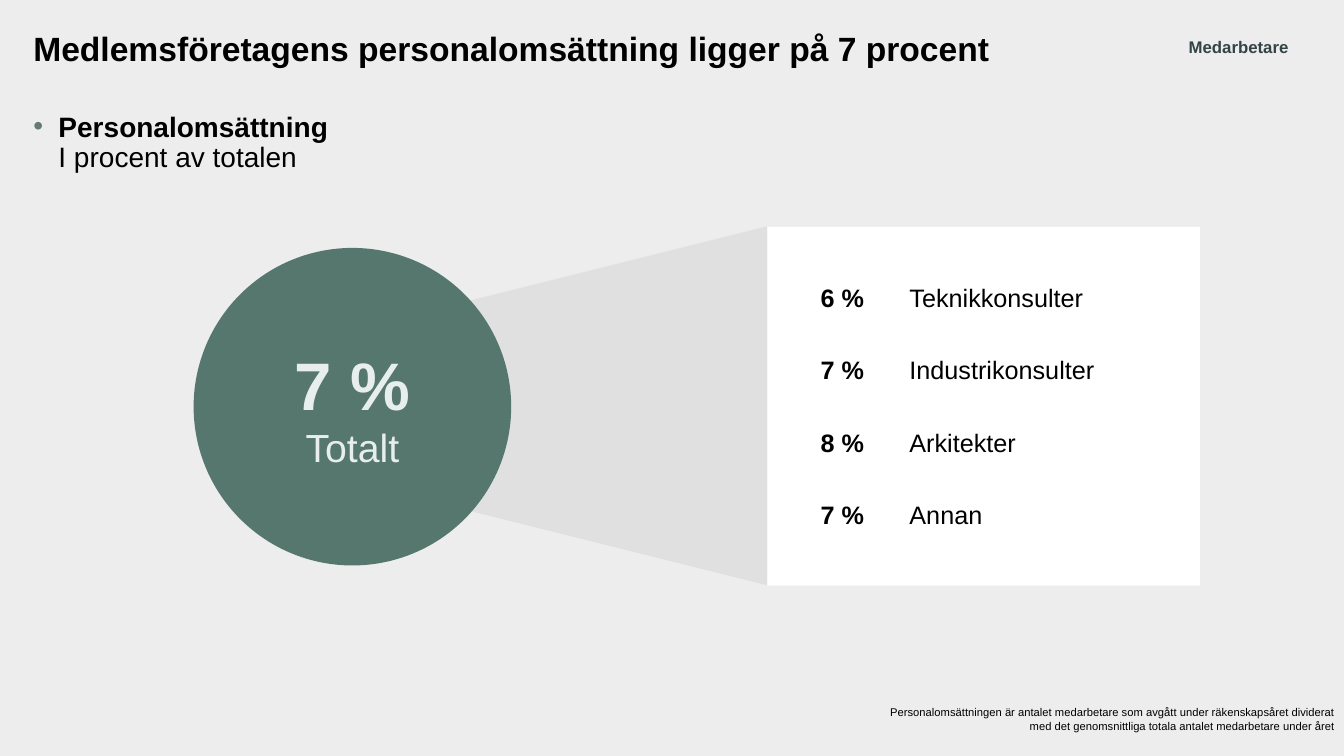
import pptx
import pptx.dml.color
import pptx.enum.shapes
import pptx.enum.text
import pptx.oxml
import pptx.oxml.ns
import pptx.util

ALIGN = pptx.enum.text.PP_ALIGN
ANCHOR = pptx.enum.text.MSO_ANCHOR
SHAPE = pptx.enum.shapes.MSO_SHAPE

PX_PER_INCH = 100
COLORS = {
    "background": "EDEDED",
    "text": "000000",
    "bullet": "657B71",
    "section": "344444",
    "beam": "DFDFDF",
    "panel": "FFFFFF",
    "total": "55776D",
    "total_text": "E7EEEC",
}
TURNOVER_BY_SECTOR = [
    ("6 %", "Teknikkonsulter"),
    ("7 %", "Industrikonsulter"),
    ("8 %", "Arkitekter"),
    ("7 %", "Annan"),
]


def px(length):
    return pptx.util.Emu(length * pptx.util.Inches(1) // PX_PER_INCH)


def rgb(name):
    return pptx.dml.color.RGBColor.from_string(COLORS[name])


def xml(tag, attributes):
    return pptx.oxml.parse_xml(
        f'<a:{tag} {pptx.oxml.ns.nsdecls("a")} {attributes}/>'
    )


class SlideBuilder:
    font_name = "Arial"

    def __init__(self, slide):
        self.slide = slide
        slide.background.fill.solid()
        slide.background.fill.fore_color.rgb = rgb("background")

    def style(self, paragraph, size, color="text", bold=None, align=None):
        paragraph.alignment = align
        font = paragraph.font
        font.name = self.font_name
        font.size = pptx.util.Pt(size)
        font.bold = bold
        font.color.rgb = rgb(color)

    def placeholder(self, index, box):
        """Move a template placeholder, clear its insets and return its first paragraph."""
        holder = self.slide.placeholders[index]
        holder.left, holder.top, holder.width, holder.height = map(px, box)
        frame = holder.text_frame
        frame.margin_left = frame.margin_right = 0
        frame.margin_top = frame.margin_bottom = 0
        frame.vertical_anchor = ANCHOR.TOP
        frame.auto_size = pptx.enum.text.MSO_AUTO_SIZE.NONE
        paragraph = frame.paragraphs[0]
        paragraph.line_spacing = 0.9
        paragraph.space_before = 0
        return paragraph

    def title(self, text, box):
        paragraph = self.placeholder(0, box)
        paragraph.text = text
        self.style(paragraph, 24, bold=True, align=ALIGN.LEFT)

    def bullet(self, heading, detail, box):
        paragraph = self.placeholder(1, box)
        properties = paragraph._p.get_or_add_pPr()
        properties.set("marL", str(px(25)))
        properties.set("indent", str(-px(25)))
        color = xml("buClr", "")
        color.append(xml("srgbClr", f'val="{COLORS["bullet"]}"'))
        properties.append(color)
        properties.append(xml("buChar", 'char="•"'))
        self.style(paragraph, 20)
        heading_run = paragraph.add_run()
        heading_run.text = heading
        heading_run.font.bold = True
        paragraph.add_line_break()
        paragraph.add_run().text = detail

    def text(self, text, box, size, **style):
        frame = self.slide.shapes.add_textbox(*map(px, box)).text_frame
        frame.word_wrap = True
        frame.text = text
        self.style(frame.paragraphs[0], size, **style)

    def shape(self, kind, box, color, rotation=0, opacity=100):
        shape = self.slide.shapes.add_shape(kind, *map(px, box))
        shape.shadow.inherit = False
        shape.rotation = rotation
        shape.fill.solid()
        shape.fill.fore_color.rgb = rgb(color)
        shape.line.fill.background()
        if opacity < 100:
            fill_color = shape._element.spPr.find(".//" + pptx.oxml.ns.qn("a:srgbClr"))
            fill_color.append(xml("alpha", f'val="{opacity * 1000}"'))
        return shape

    def circle(self, box, value, label):
        frame = self.shape(SHAPE.OVAL, box, "total").text_frame
        frame.vertical_anchor = ANCHOR.MIDDLE
        frame.text = f"{value}\n{label}"
        for paragraph, size, bold in zip(frame.paragraphs, (48, 28), (True, False)):
            self.style(paragraph, size, "total_text", bold, ALIGN.CENTER)

    def table(self, rows, box, widths):
        table = self.slide.shapes.add_table(
            len(rows), len(widths), *map(px, box)
        ).table
        table.first_row = table.horz_banding = False
        for column, width in zip(table.columns, widths):
            column.width = px(width)
        for row, values in zip(table.rows, rows):
            for position, (cell, value) in enumerate(zip(row.cells, values)):
                cell.fill.background()
                cell.vertical_anchor = ANCHOR.MIDDLE
                cell.text = value
                self.style(cell.text_frame.paragraphs[0], 18, bold=position == 0)


def main():
    presentation = pptx.Presentation()
    presentation.slide_width, presentation.slide_height = px(1333), px(750)
    page = SlideBuilder(
        presentation.slides.add_slide(presentation.slide_layouts[1])
    )
    page.title(
        "Medlemsföretagens personalomsättning ligger på 7 procent",
        (33, 32, 1268, 56),
    )
    page.bullet("Personalomsättning", "I procent av totalen", (33, 112, 1268, 56))
    page.text("Medarbetare", (1157, 32, 143, 30), 12,
              color="section", bold=True, align=ALIGN.CENTER)

    page.shape(SHAPE.TRAPEZOID, (425, 245, 356, 315), "beam", rotation=270, opacity=90)
    page.shape(SHAPE.RECTANGLE, (761, 225, 429, 356), "panel")
    page.circle((192, 246, 315, 315), "7 %", "Totalt")
    page.table(TURNOVER_BY_SECTOR, (804, 261, 353, 286), (88, 265))
    page.text(
        "Personalomsättningen är antalet medarbetare som avgått under "
        "räkenskapsåret dividerat med det genomsnittliga totala antalet "
        "medarbetare under året",
        (868, 695, 466, 37), 8, align=ALIGN.RIGHT,
    )
    presentation.save("out.pptx")


if __name__ == "__main__":
    main()
